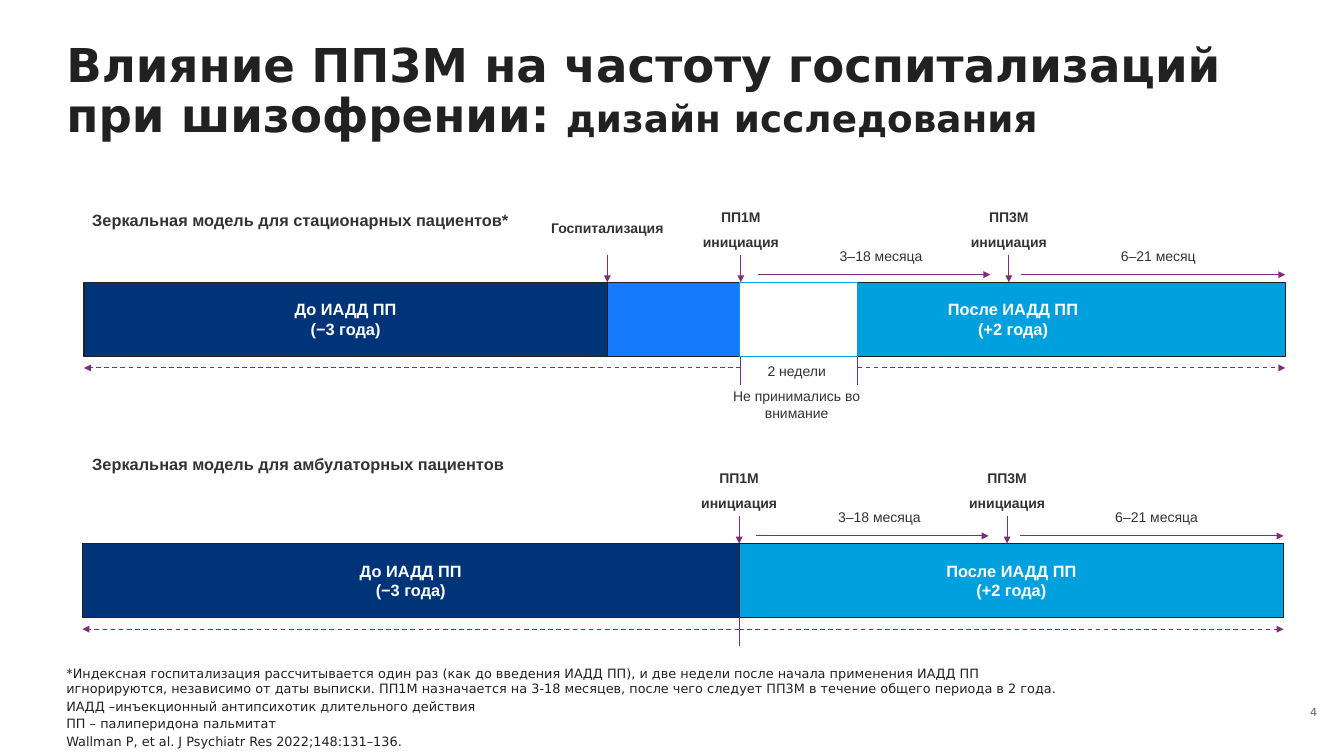
import pptx
import pptx.util
import pptx.dml.color
import pptx.enum.dml
import pptx.enum.shapes
import pptx.enum.text
import pptx.oxml.ns
from lxml import etree

COLUMNS, ROWS = 16, 9
CELL = pptx.util.Inches(1)
ALIGN = pptx.enum.text.PP_ALIGN
ANCHOR = pptx.enum.text.MSO_ANCHOR

INK, GREY, DARK = "212121", "646464", "333333"
WHITE, PLUM = "FFFFFF", "7E2E78"
NAVY, BLUE, SKY = "003479", "167AFF", "00A0DF"

BAR = 0.88          # bar height in rows
LABEL = 2.38        # label width in columns
DASH_DROP = 1.02    # bar top to dashed line
HALF_LINE = 6.9     # paragraph gap for 12 pt labels

FOOTNOTES = [
    "*Индексная госпитализация рассчитывается один раз (как до введения ИАДД ПП), "
    "и две недели после начала применения ИАДД ПП игнорируются, независимо от даты "
    "выписки. ПП1М назначается на 3-18 месяцев, после чего следует ПП3М в течение "
    "общего периода в 2 года.",
    "ИАДД –инъекционный антипсихотик длительного действия",
    "ПП – палиперидона пальмитат",
    "Wallman P, et al. J Psychiatr Res 2022;148:131–136.",
]


def grid(*cells):
    return [round(cell * CELL) for cell in cells]


def rgb(value):
    return pptx.dml.color.RGBColor.from_string(value)


def add_run(paragraph, text, size, color, bold=False, font="Arial"):
    run = paragraph.add_run()
    run.text = text
    run.font.size = pptx.util.Pt(size)
    run.font.name = font
    run.font.bold = bold
    run.font.color.rgb = rgb(color)


def add_text(slide, place, paragraphs, align=ALIGN.LEFT, anchor=ANCHOR.TOP,
             gap=0, inset=True, spacing=None):
    """Each paragraph is a list of argument tuples for add_run."""
    frame = slide.shapes.add_textbox(*grid(*place)).text_frame
    frame.word_wrap = True
    frame.vertical_anchor = anchor
    if not inset:
        frame.margin_left = frame.margin_right = 0
        frame.margin_top = frame.margin_bottom = 0
    for index, runs in enumerate(paragraphs):
        paragraph = frame.add_paragraph() if index else frame.paragraphs[0]
        paragraph.alignment = align
        if index:
            paragraph.space_before = pptx.util.Pt(gap)
        if spacing:
            paragraph.line_spacing = spacing
        for run in runs:
            add_run(paragraph, *run)


def add_label(slide, center, top, height, lines, bold=False, anchor=ANCHOR.TOP):
    add_text(slide, (center - LABEL / 2, top, LABEL, height),
             [[(line, 12, DARK, bold)] for line in lines],
             ALIGN.CENTER, anchor, HALF_LINE)


def add_period(slide, start, end, top, fill, lines=(), outline=INK):
    bar = slide.shapes.add_shape(pptx.enum.shapes.MSO_SHAPE.PENTAGON,
                                 *grid(start, top, end - start, BAR))
    bar.adjustments[0] = 0
    bar.shadow.inherit = False
    bar.fill.solid()
    bar.fill.fore_color.rgb = rgb(fill)
    bar.line.color.rgb = rgb(outline)
    bar.line.width = pptx.util.Pt(1)
    bar.text_frame.vertical_anchor = ANCHOR.MIDDLE
    paragraph = bar.text_frame.paragraphs[0]
    paragraph.alignment = ALIGN.CENTER
    for index, line in enumerate(lines):
        if index:
            paragraph.add_line_break()
        add_run(paragraph, line, 14, WHITE, True)


def add_line(slide, x1, y1, x2, y2, arrow=True, dashed=False):
    connector = slide.shapes.add_connector(
        pptx.enum.shapes.MSO_CONNECTOR.STRAIGHT, *grid(x1, y1, x2, y2))
    connector.line.color.rgb = rgb(PLUM)
    connector.line.width = pptx.util.Pt(1)
    if dashed:
        connector.line.dash_style = pptx.enum.dml.MSO_LINE.DASH
    properties = connector._element.spPr
    if arrow:
        etree.SubElement(properties.find(pptx.oxml.ns.qn("a:ln")),
                         pptx.oxml.ns.qn("a:tailEnd"), type="triangle")
    etree.SubElement(properties, pptx.oxml.ns.qn("a:effectLst"))


def add_model(slide, start, top, heading, heading_top, last_span,
              stay=0, excluded=0):
    """Draw one mirror model; stay and excluded are widths around ПП1М."""
    monthly, quarterly, end = start + 7.82, start + 11.01, start + 14.3
    admission, resumed = monthly - stay, monthly + excluded

    add_text(slide, (1, heading_top, 14.3, 0.34), [[(heading, 14, DARK, True)]])
    add_period(slide, monthly, end, top, SKY, ("После ИАДД ПП", "(+2 года)"))
    if stay:
        add_period(slide, admission, monthly, top, BLUE)
        add_label(slide, admission, top - 0.8, 0.3, ["Госпитализация"], True)
        add_line(slide, admission, top - 0.33, admission, top)
    add_period(slide, start, admission, top, NAVY, ("До ИАДД ПП", "(−3 года)"))

    for drug, moment in (("ПП1М", monthly), ("ПП3М", quarterly)):
        add_label(slide, moment, top - 0.94, 0.61, [drug, "инициация"], True,
                  ANCHOR.BOTTOM)
        add_line(slide, moment, top - 0.33, moment, top)
    for span, center, left, right in (
            ("3–18 месяца", monthly + 1.67, monthly + 0.2, quarterly - 0.22),
            (last_span, quarterly + 1.78, quarterly + 0.15, end)):
        add_label(slide, center, top - 0.46, 0.3, [span])
        add_line(slide, left, top - 0.09, right, top - 0.09)

    for origin, target in ((monthly, start), (resumed, end)):
        add_line(slide, origin, top + DASH_DROP, target, top + DASH_DROP,
                 dashed=True)
    for tick in sorted({monthly, resumed}):
        add_line(slide, tick, top + BAR, tick, top + BAR + 0.34, arrow=False)
    if excluded:
        add_label(slide, monthly + excluded / 2 - 0.03, top + 0.91, 0.81,
                  ["2 недели", "Не принимались во внимание"])
        add_period(slide, monthly - 0.02, resumed, top, WHITE, outline=SKY)


def main():
    deck = pptx.Presentation()
    deck.slide_width, deck.slide_height = grid(COLUMNS, ROWS)
    slide = deck.slides.add_slide(deck.slide_layouts[6])
    sans = "DejaVu Sans"

    add_text(slide, (0.79, 0.5, 14.41, 1.21),
             [[("Влияние ПП3М на частоту госпитализаций при шизофрении: ",
                40, INK, True, sans),
               ("дизайн исследования", 32, INK, True, sans)]],
             inset=False, spacing=0.9)
    add_model(slide, 1, 3.36, "Зеркальная модель для стационарных пациентов*",
              2.45, "6–21 месяц", stay=1.59, excluded=1.39)
    add_model(slide, 0.98, 6.47, "Зеркальная модель для амбулаторных пациентов",
              5.36, "6–21 месяца")
    add_text(slide, (0.79, 7.67, 11.96, 1.25),
             [[(note, 11, INK, False, sans)] for note in FOOTNOTES],
             anchor=ANCHOR.BOTTOM, gap=2, inset=False)
    add_text(slide, (15.28, 8.26, 0.5, 0.44), [[("4", 9.6, GREY, False, sans)]],
             ALIGN.RIGHT, ANCHOR.MIDDLE)
    deck.save("out.pptx")


if __name__ == "__main__":
    main()
